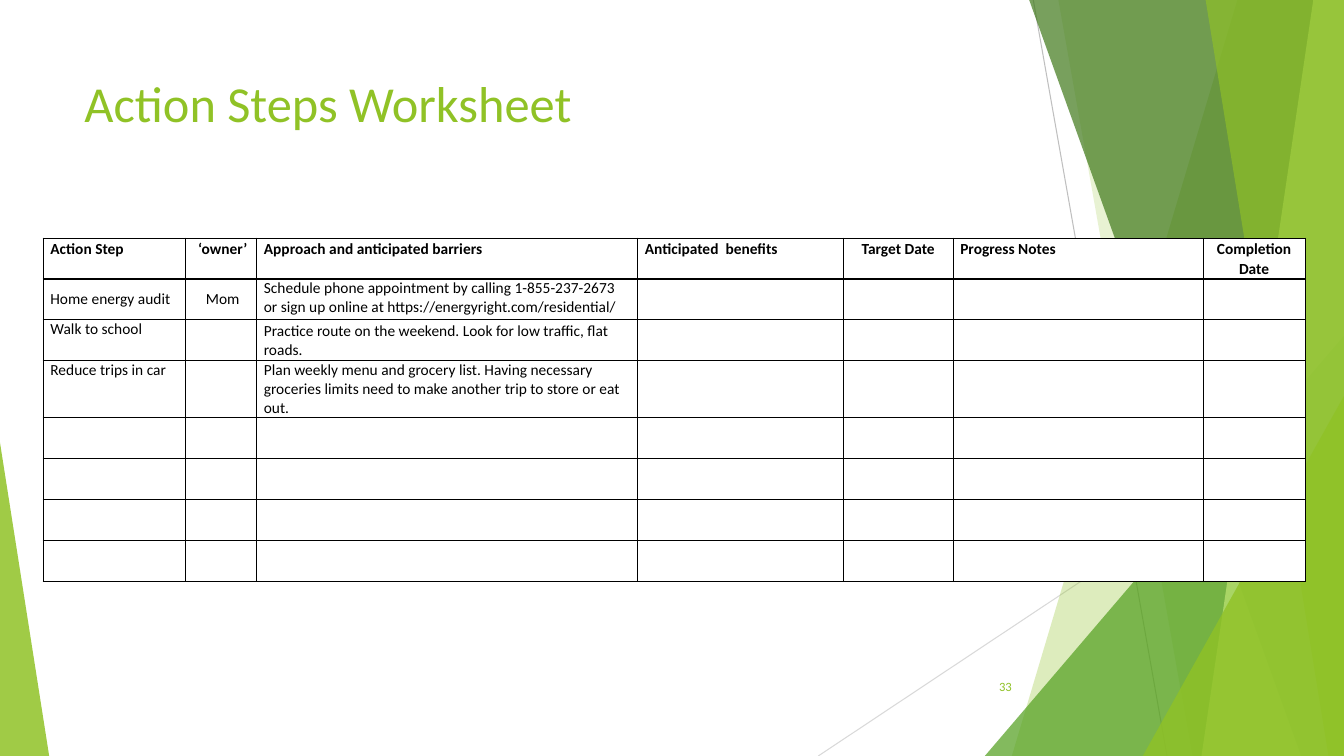
from lxml import etree
from pptx import Presentation, util as u
from pptx.dml.color import RGBColor
from pptx.enum import shapes, text
from pptx.oxml.ns import qn

WIDE, HIGH, TOP = 33.87, 19.05, -0.02

THEME = {
    "font": "Calibri", "title": 36, "table": 11, "number": 9,
    "lime": "90C226", "leaf": "54A021", "moss": "3F7819", "pale": "C0E474",
    "ink": "000000", "paper": "FFFFFF", "grey": "BFBFBF", "mist": "D9D9D9",
}

TITLE = "Action Steps Worksheet"
NUMBER = "33"
HEADS = ["Action Step", " ‘owner’", "Approach and anticipated barriers",
         "Anticipated  benefits", "Target Date", "Progress Notes", "Completion Date"]
STEPS = [
    ("Home energy audit", " Mom",
     "Schedule phone appointment by calling 1-855-237-2673 or sign up online at "
     "https://energyright.com/residential/"),
    ("Walk to school", "",
     "Practice route on the weekend. Look for low traffic, flat roads."),
    ("Reduce trips in car", "",
     "Plan weekly menu and grocery list. Having necessary groceries limits need "
     "to make another trip to store or eat out."),
]
COLS = [3.58, 1.8, 9.6, 5.18, 2.77, 6.3, 2.57]
ROWS = [1.03, 1.03, 1.03, 1.44, 1.03, 1.03, 1.03, 1.03]
CENTRED = {1, 4, 6}
MIDDLE = {(1, 0), (1, 1), (2, 2)}
FILLED = {5, 6}

LINES = [(26.04, 0, 29.41, HIGH, "grey"), (WIDE, 10.24, 20.62, HIGH, "mist")]
FACETS = [
    ("band", (31.19, 25.5), "lime", 30),
    ("band", (26.67, 30.05), "lime", 20),
    ("peak", (24.82, 8.46, 9.05, 1), "leaf", 72),
    ("band", (25.93, 32.79), "moss", 70),
    ("band", (33.1, 30.28), "pale", 70),
    ("band", (30.38, 33.48), "lime", 65),
    ("peak", (28.8, 9.98, 5.07, 1), "lime", 80),
    ("peak", (0, 11.15, 1.24, 0), "lime", 85),
]


def tint(name):
    return RGBColor.from_string(THEME[name])


def write(frame, words, size="table", color="ink", bold=False, align="LEFT",
          anchor="TOP", space=1.0):
    frame.word_wrap = True
    frame.vertical_anchor = getattr(text.MSO_ANCHOR, anchor)
    para = frame.paragraphs[0]
    para.alignment = getattr(text.PP_ALIGN, align)
    para.line_spacing = space
    run = para.add_run()
    run.text = words
    font = run.font
    font.name, font.size, font.bold = THEME["font"], u.Pt(THEME[size]), bold
    font.color.rgb = tint(color)


def label(slide, box, words, **style):
    shape = slide.shapes.add_textbox(*map(u.Cm, box))
    write(shape.text_frame, words, **style)


def draw_line(slide, x1, y1, x2, y2, color):
    line = slide.shapes.add_connector(
        shapes.MSO_CONNECTOR.STRAIGHT, *map(u.Cm, (x1, y1, x2, y2)))
    line.line.color.rgb = tint(color)
    line.line.width = u.Pt(0.75)
    etree.SubElement(line._element.spPr, qn("a:effectLst"))


def draw_facet(slide, kind, place, color, alpha):
    if kind == "band":
        head, foot = place
        path = [(WIDE, TOP), (WIDE, HIGH), (foot, HIGH), (head, TOP)]
        pen = slide.shapes.build_freeform(u.Cm(head), u.Cm(TOP))
        pen.add_line_segments([(u.Cm(x), u.Cm(y)) for x, y in path], close=True)
        shape = pen.convert_to_shape()
    else:
        left, top, width, tip = place
        shape = slide.shapes.add_shape(
            shapes.MSO_SHAPE.ISOSCELES_TRIANGLE,
            *map(u.Cm, (left, top, width, HIGH - top)))
        shape.adjustments[0] = tip
    shape.shadow.inherit = False
    shape.line.fill.background()
    shape.fill.solid()
    shape.fill.fore_color.rgb = tint(color)
    hue = shape._element.spPr.find(qn("a:solidFill"))[0]
    etree.SubElement(hue, qn("a:alpha"), val=str(alpha * 1000))


def edge(cell):
    props = cell._tc.get_or_add_tcPr()
    for side in ("lnL", "lnR", "lnT", "lnB"):
        line = etree.SubElement(props, qn("a:" + side), w=str(u.Pt(1)))
        fill = etree.SubElement(line, qn("a:solidFill"))
        etree.SubElement(fill, qn("a:srgbClr"), val=THEME["ink"])


def draw_table(slide):
    box = map(u.Cm, (1.09, 6, sum(COLS), sum(ROWS)))
    grid = slide.shapes.add_table(len(ROWS), len(COLS), *box).table
    grid.first_row = grid.horz_banding = False
    for col, width in zip(grid.columns, COLS):
        col.width = u.Cm(width)
    for row, height in zip(grid.rows, ROWS):
        row.height = u.Cm(height)
    data = [HEADS, *STEPS]
    for r in range(len(ROWS)):
        for c in range(len(COLS)):
            cell = grid.cell(r, c)
            cell.margin_left = cell.margin_right = u.Cm(0.18)
            cell.margin_top = cell.margin_bottom = 0
            edge(cell)
            if c in FILLED:
                cell.fill.solid()
                cell.fill.fore_color.rgb = tint("paper")
            else:
                cell.fill.background()
            words = data[r][c] if r < len(data) and c < len(data[r]) else ""
            if words:
                write(cell.text_frame, words, bold=r == 0,
                      align="CENTER" if c in CENTRED else "LEFT",
                      space=1.07 if r == 0 else 1.0)
                cell.vertical_anchor = (text.MSO_ANCHOR.MIDDLE if (r, c) in MIDDLE
                                        else text.MSO_ANCHOR.TOP)
            else:
                cell.text_frame.paragraphs[0].font.size = u.Pt(THEME["table"])


def main():
    deck = Presentation()
    deck.slide_width, deck.slide_height = u.Cm(WIDE), u.Cm(HIGH)
    slide = deck.slides.add_slide(deck.slide_layouts[6])
    for line in LINES:
        draw_line(slide, *line)
    for facet in FACETS:
        draw_facet(slide, *facet)
    label(slide, (1.88, 1.7, 23.88, 3.66), TITLE, size="title", color="lime")
    label(slide, (23.85, 16.79, 1.9, 1.02), NUMBER, size="number", color="lime",
          align="RIGHT", anchor="MIDDLE")
    draw_table(slide)
    deck.save("out.pptx")


if __name__ == "__main__":
    main()
